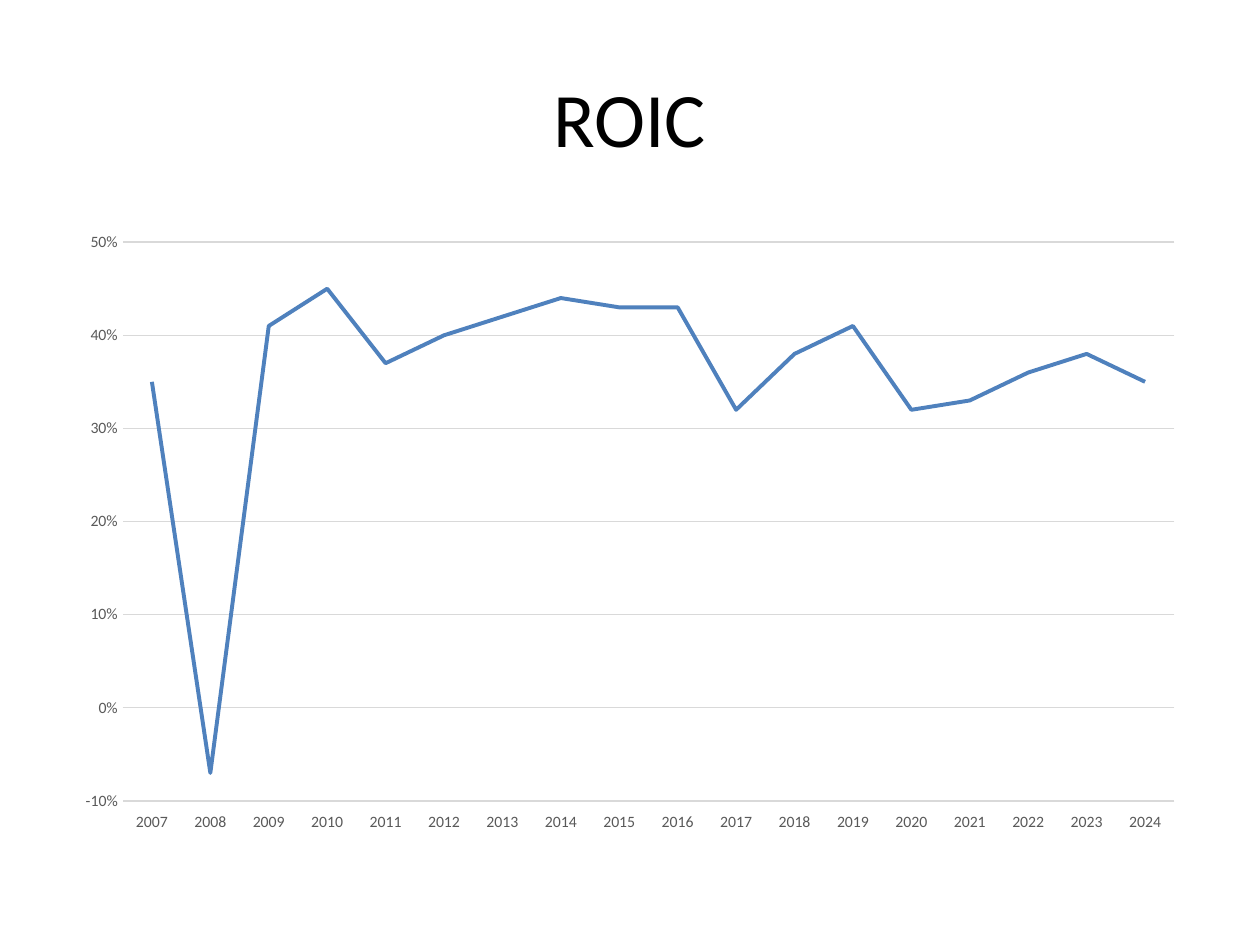
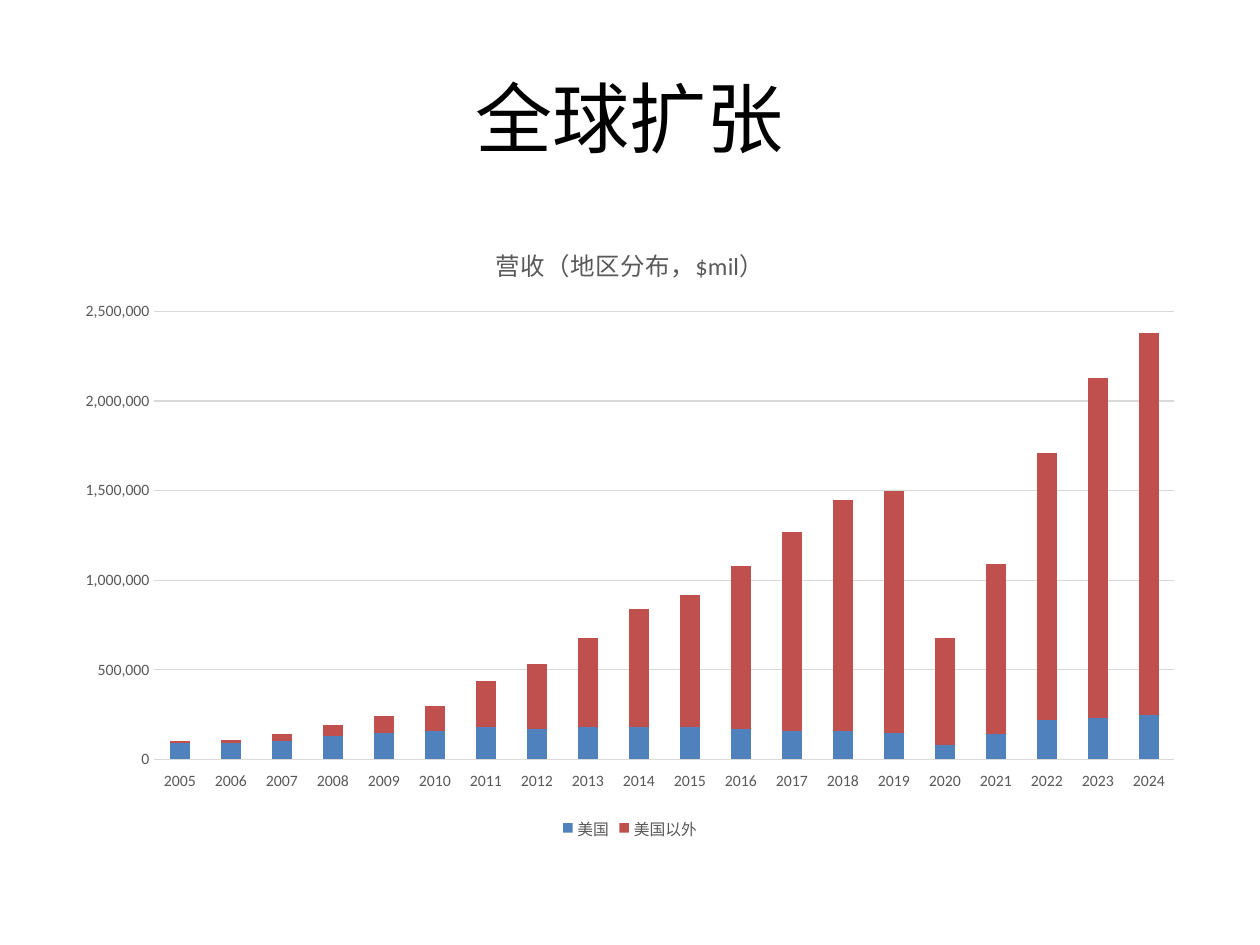
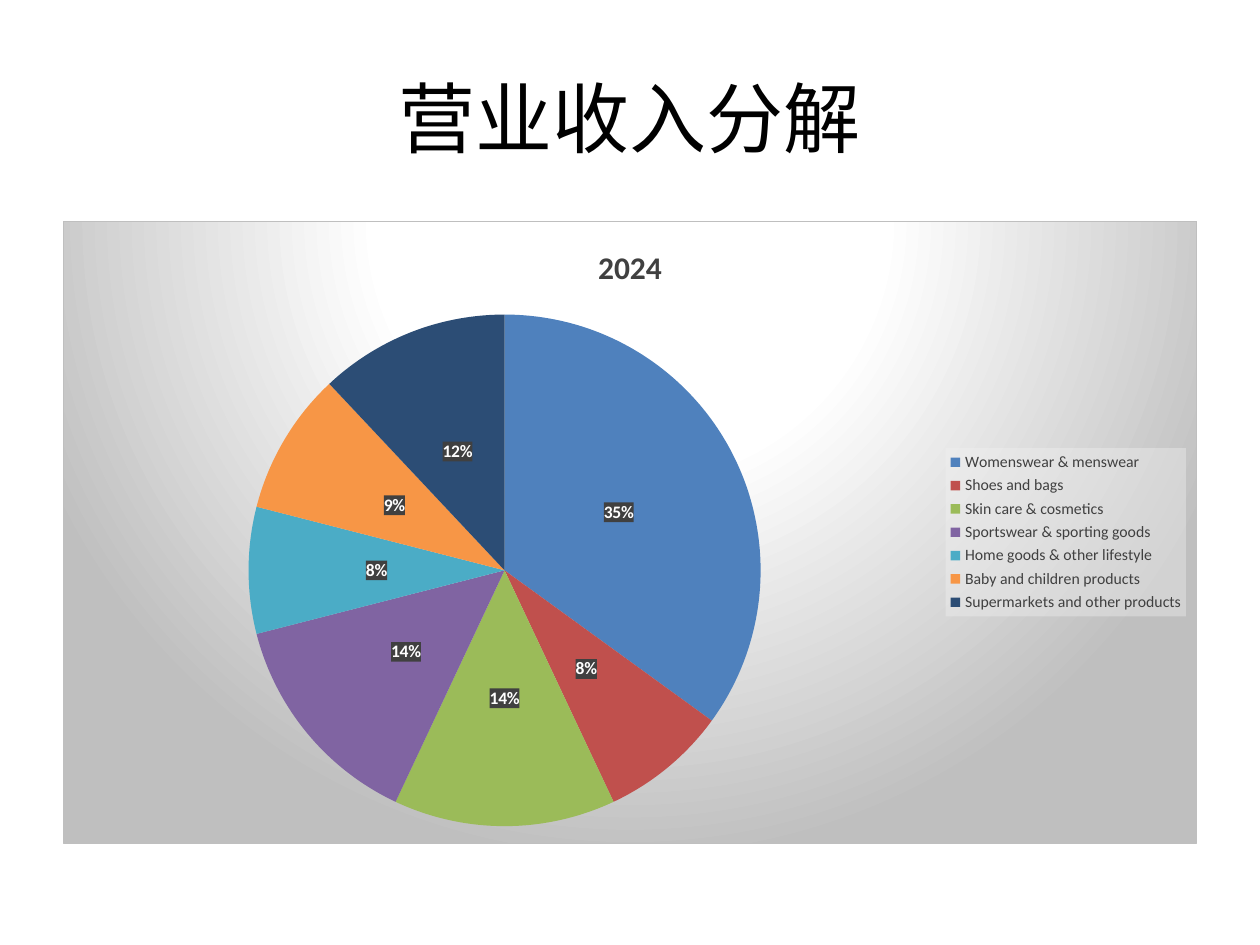
from lxml import etree
from pptx import Presentation
from pptx.chart.data import CategoryChartData
from pptx.dml.color import RGBColor
from pptx.enum.chart import (XL_CHART_TYPE, XL_LABEL_POSITION, XL_LEGEND_POSITION,
                             XL_TICK_LABEL_POSITION, XL_TICK_MARK)
from pptx.enum.text import MSO_ANCHOR, PP_ALIGN
from pptx.util import Inches, Pt

LINE, STACKED, PIE = XL_CHART_TYPE.LINE, XL_CHART_TYPE.COLUMN_STACKED, XL_CHART_TYPE.PIE
LEGEND_BOTTOM, LEGEND_RIGHT = XL_LEGEND_POSITION.BOTTOM, XL_LEGEND_POSITION.RIGHT
LABEL_CENTER = XL_LABEL_POSITION.CENTER
TICK_NONE, LABELS_LOW = XL_TICK_MARK.NONE, XL_TICK_LABEL_POSITION.LOW
MIDDLE, CENTER = MSO_ANCHOR.MIDDLE, PP_ALIGN.CENTER

FONT = "Calibri"
COLORS = {
    "black": "000000", "white": "FFFFFF", "axis": "595959", "grid": "D9D9D9",
    "dark": "404040", "frame": "BFBFBF", "pale": "F2F2F2",
    "blue": "4F81BD", "red": "C0504D", "green": "9BBB59", "purple": "8064A2",
    "teal": "4BACC6", "orange": "F79646", "navy": "2C4D75",
}
SLICE_COLORS = ["blue", "red", "green", "purple", "teal", "orange", "navy"]

WIDTH, HEIGHT = Inches(10), Inches(7.5)
TITLE_BOX = (0.05, 0.04, 0.9, 1 / 6)
CHART_BOX = (0.05, 7 / 30, 0.9, 0.66)

ROIC = [0.35, -0.07, 0.41, 0.45, 0.37, 0.4, 0.42, 0.44, 0.43,
        0.43, 0.32, 0.38, 0.41, 0.32, 0.33, 0.36, 0.38, 0.35]
REVENUE = {
    "美国": [90000, 90000, 100000, 130000, 150000, 160000, 180000, 170000, 180000, 180000,
           180000, 170000, 160000, 160000, 150000, 80000, 140000, 220000, 230000, 250000],
    "美国以外": [10000, 20000, 40000, 60000, 90000, 140000, 260000, 360000, 500000, 660000,
             740000, 910000, 1110000, 1290000, 1350000, 600000, 950000, 1490000, 1900000, 2130000],
}
PRODUCTS = {
    "Womenswear & menswear": 35,
    "Shoes and bags": 8,
    "Skin care & cosmetics": 14,
    "Sportswear & sporting goods": 14,
    "Home goods & other lifestyle": 8,
    "Baby and children products": 9,
    "Supermarkets and other products": 12,
}

NAMESPACES = ('xmlns:c="http://schemas.openxmlformats.org/drawingml/2006/chart" '
              'xmlns:a="http://schemas.openxmlformats.org/drawingml/2006/main"')


def color(name):
    return RGBColor.from_string(COLORS[name])


def set_font(font, size, shade, bold=False):
    font.name, font.size, font.bold = FONT, Pt(size), bold
    font.color.rgb = color(shade)


def place(box):
    left, top, width, height = box
    return [round(share * side) for share, side in
            zip((left, top, width, height), (WIDTH, HEIGHT, WIDTH, HEIGHT))]


def shape_properties(content):
    return etree.fromstring(f"<c:spPr {NAMESPACES}>{content}</c:spPr>")


def solid(shade, opacity):
    return (f'<a:solidFill><a:srgbClr val="{COLORS[shade]}">'
            f'<a:alpha val="{opacity * 1000}"/></a:srgbClr></a:solidFill>')


def radial_frame():
    stops = "".join(f'<a:gs pos="{share * 1000}"><a:srgbClr val="{COLORS[shade]}"/></a:gs>'
                    for share, shade in ((0, "white"), (39, "white"), (100, "frame")))
    return (f'<a:gradFill><a:gsLst>{stops}</a:gsLst><a:path path="circle">'
            '<a:fillToRect l="50000" t="-80000" r="50000" b="180000"/></a:path></a:gradFill>'
            f'<a:ln w="{Pt(0.75)}"><a:solidFill><a:srgbClr val="{COLORS["frame"]}"/>'
            '</a:solidFill></a:ln>')


def add_titled_slide(deck, heading):
    slide = deck.slides.add_slide(deck.slide_layouts[6])
    frame = slide.shapes.add_textbox(*place(TITLE_BOX)).text_frame
    frame.word_wrap = True
    frame.vertical_anchor = MIDDLE
    paragraph = frame.paragraphs[0]
    paragraph.alignment = CENTER
    run = paragraph.add_run()
    run.text = heading
    set_font(run.font, 44, "black")
    return slide


def add_chart(slide, kind, categories, series, box=CHART_BOX):
    data = CategoryChartData()
    data.categories = categories
    for name, values in series.items():
        data.add_series(name, values)
    chart = slide.shapes.add_chart(kind, *place(box), data).chart
    set_font(chart.font, 10, "black")
    chart.has_title = chart.has_legend = False
    chart.plots[0].vary_by_categories = kind == PIE
    return chart


def add_chart_title(chart, text, size, shade, bold=False):
    chart.has_title = True
    chart.chart_title.include_in_layout = False
    run = chart.chart_title.text_frame.paragraphs[0].add_run()
    run.text = text
    set_font(run.font, size, shade, bold)


def add_legend(chart, position, shade):
    chart.has_legend = True
    chart.legend.position = position
    chart.legend.include_in_layout = False
    set_font(chart.legend.font, 9, shade)


def style_axes(chart, low, high, step, number_format):
    years, amounts = chart.category_axis, chart.value_axis
    for axis in (years, amounts):
        axis.major_tick_mark = axis.minor_tick_mark = TICK_NONE
        set_font(axis.tick_labels.font, 9, "axis")
    years.tick_label_position = LABELS_LOW
    amounts.minimum_scale, amounts.maximum_scale, amounts.major_unit = low, high, step
    amounts.tick_labels.number_format = number_format
    amounts.tick_labels.number_format_is_linked = False
    amounts.has_major_gridlines = True
    for line in (years.format.line, amounts.major_gridlines.format.line):
        line.color.rgb = color("grid")
        line.width = Pt(0.75)
    amounts.format.line.fill.background()


def build_roic(deck):
    slide = add_titled_slide(deck, "ROIC")
    years = [str(year) for year in range(2007, 2025)]
    chart = add_chart(slide, LINE, years, {"Series 1": ROIC})
    style_axes(chart, -0.1, 0.5, 0.1, "0%")
    roic = chart.plots[0].series[0]
    roic.smooth = False
    roic.format.line.color.rgb = color("blue")
    roic.format.line.width = Pt(2.25)


def build_expansion(deck):
    slide = add_titled_slide(deck, "全球扩张")
    years = [str(year) for year in range(2005, 2025)]
    chart = add_chart(slide, STACKED, years, REVENUE)
    style_axes(chart, 0, 2500000, 500000, "###,##0")
    add_chart_title(chart, "营收（地区分布，$mil）", 14, "axis")
    add_legend(chart, LEGEND_BOTTOM, "axis")
    columns = chart.plots[0]
    columns.gap_width, columns.overlap = 150, 100
    for region, shade in zip(columns.series, ("blue", "red")):
        region.format.fill.solid()
        region.format.fill.fore_color.rgb = color(shade)


def build_breakdown(deck):
    slide = add_titled_slide(deck, "营业收入分解")
    chart = add_chart(slide, PIE, list(PRODUCTS), {"2024": list(PRODUCTS.values())})
    add_chart_title(chart, "2024", 18, "dark", True)
    add_legend(chart, LEGEND_RIGHT, "dark")
    pie = chart.plots[0]
    for index, shade in enumerate(SLICE_COLORS):
        fill = pie.series[0].points[index].format.fill
        fill.solid()
        fill.fore_color.rgb = color(shade)
    labels = pie.series[0].data_labels
    labels.show_percentage, labels.show_value = True, False
    labels.number_format, labels.number_format_is_linked = "0%", False
    labels.position = LABEL_CENTER
    set_font(labels.font, 10, "white", True)
    for part, content in ((chart.element, radial_frame()),
                          (chart.legend._element, solid("pale", 39)),
                          (labels._element, solid("dark", 75))):
        part.find("{*}txPr").addprevious(shape_properties(content))


def main():
    deck = Presentation()
    deck.slide_width, deck.slide_height = WIDTH, HEIGHT
    for build in (build_roic, build_expansion, build_breakdown):
        build(deck)
    deck.save("out.pptx")


if __name__ == "__main__":
    main()
